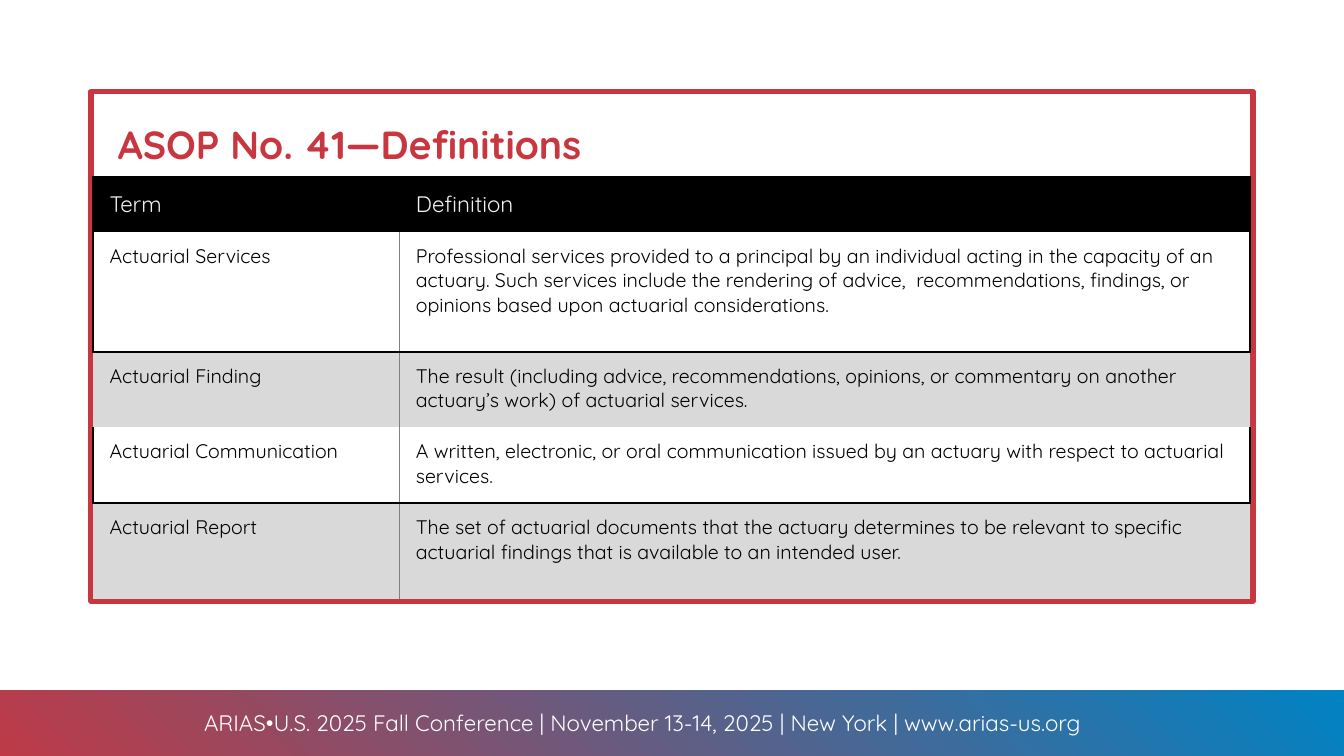
from dataclasses import dataclass

from lxml.etree import SubElement
from pptx import Presentation
from pptx.dml.color import RGBColor
from pptx.enum.shapes import MSO_SHAPE as Kind
from pptx.enum.text import MSO_ANCHOR as Anchor, PP_ALIGN as Align
from pptx.oxml.ns import qn
from pptx.util import Cm, Pt

FONT = "Quicksand"
RED = "C83640"
BLUE = "0083C4"
BLACK = "000000"
WHITE = "FFFFFF"
PALE = "F2F2F2"
SHADE = "D9D9D9"
RULE = "808080"


@dataclass
class Box:
    left: float
    top: float
    width: float
    height: float

    def args(self) -> tuple:
        return Cm(self.left), Cm(self.top), Cm(self.width), Cm(self.height)


@dataclass
class Entry:
    term: str
    text: str
    height: float
    shade: bool = False
    head: bool = False

    def edges(self, col: int) -> dict:
        heavy, thin = (BLACK, 1.5), (RULE, 0.5)
        if self.head:
            return {"T": heavy, "L" if col == 0 else "R": heavy}
        inner, outer = ("R", "L") if col == 0 else ("L", "R")
        if self.shade:
            return {inner: thin, "T": heavy}
        return {inner: thin, outer: heavy, "B": heavy}


ROWS = [
    Entry("Term", "Definition", 1.37, head=True),
    Entry(
        "Actuarial Services",
        "Professional services provided to a principal by an individual acting "
        "in the capacity of an actuary. Such services include the rendering of "
        "advice,  recommendations, findings, or opinions based upon actuarial "
        "considerations.",
        3.02,
    ),
    Entry(
        "Actuarial Finding",
        "The result (including advice, recommendations, opinions, or commentary "
        "on another actuary’s work) of actuarial services.",
        1.91,
        shade=True,
    ),
    Entry(
        "Actuarial Communication",
        "A written, electronic, or oral communication issued by an actuary with "
        "respect to actuarial services.",
        1.91,
    ),
    Entry(
        "Actuarial Report",
        "The set of actuarial documents that the actuary determines to be "
        "relevant to specific actuarial findings that is available to an "
        "intended user.",
        2.41,
        shade=True,
    ),
]
COLS = [7.72, 21.44]


def tint(code: str) -> RGBColor:
    return RGBColor.from_string(code)


def write(frame, text: str, size: float, code: str, bold: bool = False, align=Align.LEFT) -> None:
    frame.text = text
    line = frame.paragraphs[0]
    line.alignment = align
    font = line.runs[0].font
    font.name, font.size, font.bold = FONT, Pt(size), bold
    font.color.rgb = tint(code)


def inset(part, left: float, top: float, right: float, base: float) -> None:
    part.margin_left, part.margin_top = Cm(left), Cm(top)
    part.margin_right, part.margin_bottom = Cm(right), Cm(base)


def plate(slide, box: Box):
    shape = slide.shapes.add_shape(Kind.RECTANGLE, *box.args())
    shape.shadow.inherit = False
    return shape


def band(slide) -> None:
    shape = plate(slide, Box(-0.08, 17.4, 34.04, 3.53))
    shape.line.fill.background()
    shape.fill.gradient()
    shape.fill.gradient_angle = 45
    for stop, code, place in zip(shape.fill.gradient_stops, (RED, BLUE), (0, 1)):
        stop.color.rgb = tint(code)
        stop.position = place


def footer(slide) -> None:
    frame = slide.shapes.add_textbox(*Box(1.55, 17.73, 29.29, 0.97).args()).text_frame
    frame.word_wrap = True
    frame.vertical_anchor = Anchor.MIDDLE
    inset(frame, 0.13, 0.13, 0.13, 0.13)
    text = "ARIAS•U.S. 2025 Fall Conference | November 13-14, 2025 | New York | www.arias-us.org"
    write(frame, text, 16, WHITE, align=Align.CENTER)


def border(slide) -> None:
    shape = plate(slide, Box(2.29, 2.31, 29.29, 12.83))
    shape.fill.solid()
    shape.fill.fore_color.rgb = tint(WHITE)
    color = shape.fill._xPr.find(qn("a:solidFill"))[0]
    SubElement(color, qn("a:alpha"), val="78000")
    shape.line.color.rgb = tint(RED)
    shape.line.width = Pt(4)


def title(slide) -> None:
    shape = slide.shapes.title
    shape.left, shape.top, shape.width, shape.height = Box(2.84, 2.9, 28.17, 1.45).args()
    shape._element.getparent().append(shape._element)
    frame = shape.text_frame
    frame.vertical_anchor = Anchor.TOP
    inset(frame, 0.13, 0.13, 0.13, 0.13)
    write(frame, "ASOP No. 41—Definitions", 28, RED, bold=True)


def outline(cell, edges: dict) -> None:
    props = cell._tc.get_or_add_tcPr()
    for side in "LRTB":
        code, width = edges.get(side, (None, 0))
        line = SubElement(props, qn(f"a:ln{side}"), w=str(int(Pt(width))))
        if code:
            fill = SubElement(line, qn("a:solidFill"))
            SubElement(fill, qn("a:srgbClr"), val=code)
        else:
            SubElement(line, qn("a:noFill"))


def fill(cell, entry: Entry, col: int) -> None:
    inset(cell, 0.42, 0.3, 0.33, 0.3)
    cell.vertical_anchor = Anchor.MIDDLE if entry.head else Anchor.TOP
    outline(cell, entry.edges(col))
    if entry.head or entry.shade:
        cell.fill.solid()
        cell.fill.fore_color.rgb = tint(BLACK if entry.head else SHADE)
    else:
        cell.fill.background()
    size, code = (16, PALE) if entry.head else (14, BLACK)
    write(cell.text_frame, (entry.term, entry.text)[col], size, code)


def grid(slide) -> None:
    box = Box(2.34, 4.47, sum(COLS), sum(entry.height for entry in ROWS))
    table = slide.shapes.add_table(len(ROWS), len(COLS), *box.args()).table
    table.horz_banding = False
    for col, width in enumerate(COLS):
        table.columns[col].width = Cm(width)
    for row, entry in enumerate(ROWS):
        table.rows[row].height = Cm(entry.height)
        for col in range(len(COLS)):
            fill(table.cell(row, col), entry, col)


def main() -> None:
    deck = Presentation()
    deck.slide_width, deck.slide_height = Cm(33.87), Cm(19.05)
    slide = deck.slides.add_slide(deck.slide_layouts[5])
    for draw in (band, footer, border, title, grid):
        draw(slide)
    deck.save("out.pptx")


if __name__ == "__main__":
    main()
